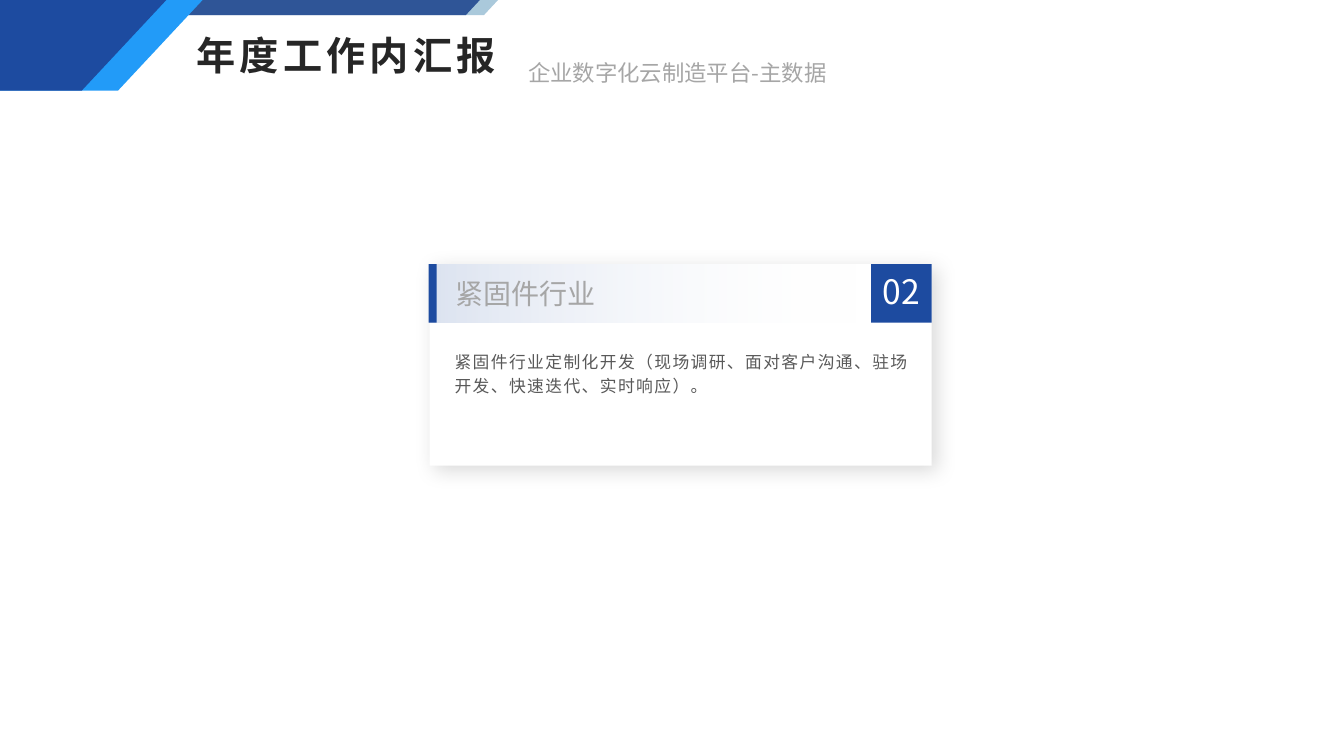
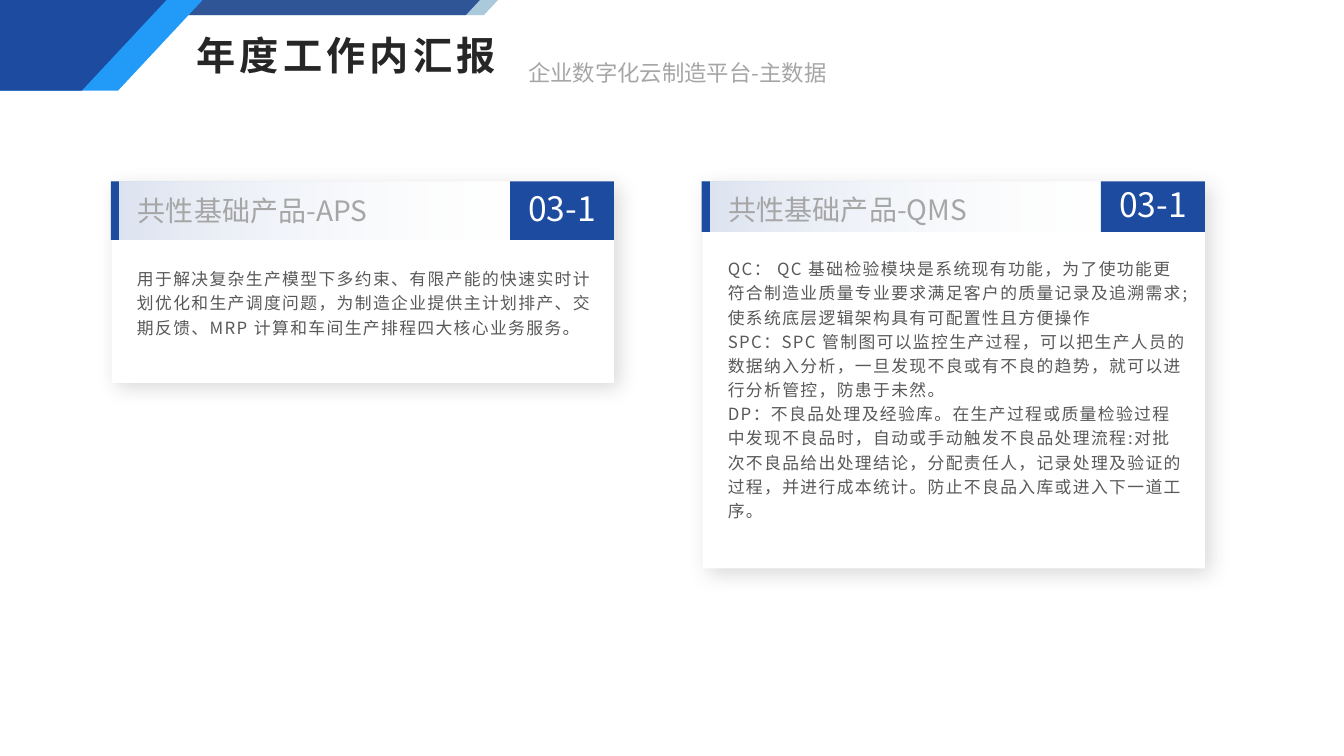
"""Build two annual report slides with titled product cards."""
from dataclasses import dataclass
from typing import Optional

from lxml.etree import SubElement
from pptx import Presentation
from pptx.dml.color import RGBColor
from pptx.enum.shapes import MSO_SHAPE as Preset
from pptx.enum.text import MSO_ANCHOR as Anchor, MSO_AUTO_SIZE as AutoSize, PP_ALIGN as Align
from pptx.oxml.ns import qn
from pptx.shapes.autoshape import Shape
from pptx.slide import Slide, SlideLayout
from pptx.util import Pt

PX = 9144


@dataclass(frozen=True)
class Theme:
    """Colours, font and type sizes of the presentation."""

    font: str = "Noto Sans CJK SC"
    navy: str = "1D4BA0"
    sky: str = "229BF8"
    steel: str = "2F5597"
    teal: str = "1A6D9F"
    white: str = "FFFFFF"
    black: str = "000000"
    ink: str = "262626"
    body_grey: str = "595959"
    soft_grey: str = "A6A6A6"
    title_size: int = 28
    badge_size: int = 24
    heading_size: int = 20
    subtitle_size: int = 16
    body_size: int = 12


THEME = Theme()


@dataclass(frozen=True)
class Box:
    """Position and size in px."""

    left: int
    top: int
    width: int
    height: int

    def emu(self) -> tuple[int, int, int, int]:
        """Return the box in EMU."""
        return self.left * PX, self.top * PX, self.width * PX, self.height * PX


@dataclass(frozen=True)
class TextStyle:
    """Type settings of a text."""

    size: int
    color: str
    bold: bool = False
    tracking: int = 0
    line_spacing: Optional[float] = None
    align: Optional[Align] = None


TITLE = TextStyle(THEME.title_size, THEME.ink, bold=True, tracking=3)
SUBTITLE = TextStyle(THEME.subtitle_size, THEME.soft_grey)
HEADING = TextStyle(THEME.heading_size, THEME.soft_grey)
BODY = TextStyle(THEME.body_size, THEME.body_grey, tracking=1, line_spacing=1.2)
BADGE = TextStyle(THEME.badge_size, THEME.white, align=Align.CENTER)


@dataclass(frozen=True)
class Card:
    """A product card with a header band and a numbered badge."""

    left: int
    top: int
    height: int
    header: int
    badge_width: int
    body_height: int
    badge: str
    heading: str
    body: str


CARD_WIDTH = 498
BAND_WIDTH = 438

SLIDE_CARDS = (
    (
        Card(426, 262, 200, 58, 60, 57, "02", "紧固件行业",
             "紧固件行业定制化开发（现场调研、面对客户沟通、驻场开发、快速迭代、实时响应）。"),
    ),
    (
        Card(111, 180, 200, 58, 103, 105, "03-1", "共性基础产品-APS",
             "用于解决复杂生产模型下多约束、有限产能的快速实时计划优化和生产调度问题，"
             "为制造企业提供主计划排产、交期反馈、MRP 计算和车间生产排程四大核心业务服务。"),
        Card(697, 180, 384, 50, 103, 281, "03-1", "共性基础产品-QMS",
             "QC： QC 基础检验模块是系统现有功能，为了使功能更符合制造业质量专业要求"
             "满足客户的质量记录及追溯需求;使系统底层逻辑架构具有可配置性且方便操作\n"
             "SPC：SPC 管制图可以监控生产过程，可以把生产人员的数据纳入分析，"
             "一旦发现不良或有不良的趋势，就可以进行分析管控，防患于未然。\n"
             "DP：不良品处理及经验库。在生产过程或质量检验过程中发现不良品时，"
             "自动或手动触发不良品处理流程:对批次不良品给出处理结论，分配责任人，"
             "记录处理及验证的过程，并进行成本统计。防止不良品入库或进入下一道工序。"),
    ),
)


def set_alphas(shape: Shape, *percents: int) -> None:
    """Set the opacity of each fill colour in turn."""
    for color, percent in zip(shape.element.spPr.iter(qn("a:srgbClr")), percents):
        SubElement(color, qn("a:alpha"), val=str(percent * 1000))


def paint(shape: Shape, color: str) -> Shape:
    """Give a shape a plain fill without line or shadow."""
    shape.shadow.inherit = False
    shape.line.fill.background()
    shape.fill.solid()
    shape.fill.fore_color.rgb = RGBColor.from_string(color)
    return shape


def add_block(slide: Slide, box: Box, color: str, preset: Preset = Preset.RECTANGLE) -> Shape:
    """Add a plain preset shape."""
    return paint(slide.shapes.add_shape(preset, *box.emu()), color)


def add_outline(slide: Slide, points: tuple[tuple[int, int], ...], color: str) -> Shape:
    """Add a closed polygon."""
    builder = slide.shapes.build_freeform(*points[0], scale=PX)
    builder.add_line_segments(points[1:])
    return paint(builder.convert_to_shape(), color)


def write(shape: Shape, text: str, style: TextStyle) -> None:
    """Fill a shape with styled text."""
    shape.text_frame.text = text
    for paragraph in shape.text_frame.paragraphs:
        paragraph.alignment = style.align
        paragraph.line_spacing = style.line_spacing
        for run in paragraph.runs:
            run.font.name = THEME.font
            run.font.size = Pt(style.size)
            run.font.bold = style.bold
            run.font.color.rgb = RGBColor.from_string(style.color)
            properties = run.font._element
            properties.set("spc", str(style.tracking * 100))
            SubElement(properties, qn("a:ea"), typeface=THEME.font)


def add_text(slide: Slide, box: Box, text: str, style: TextStyle, wrap: bool = True) -> None:
    """Add a text box that grows with its text."""
    label = slide.shapes.add_textbox(*box.emu())
    label.text_frame.word_wrap = wrap
    label.text_frame.auto_size = AutoSize.SHAPE_TO_FIT_TEXT
    write(label, text, style)


def decorate_layout(layout: SlideLayout, slide: Slide) -> None:
    """Draw the corner bands and move them to the shared layout."""
    back_strip = add_block(slide, Box(118, 0, 376, 15), THEME.teal, Preset.PARALLELOGRAM)
    set_alphas(back_strip, 37)
    front_strip = add_block(slide, Box(100, 0, 376, 15), THEME.steel, Preset.PARALLELOGRAM)
    for strip in (back_strip, front_strip):
        strip.adjustments[0] = 0.93
    sky_corner = add_outline(slide, ((0, 0), (201, 0), (117, 90), (0, 90)), THEME.sky)
    navy_corner = add_outline(slide, ((0, 0), (165, 0), (81, 90), (0, 90)), THEME.navy)
    for band in (back_strip, front_strip, sky_corner, navy_corner):
        layout.element.cSld.spTree.append(band.element)


def add_titles(slide: Slide) -> None:
    """Add the report title and its subtitle."""
    add_text(slide, Box(185, 26, 321, 57), "年度工作内汇报", TITLE, wrap=False)
    add_text(slide, Box(514, 54, 322, 37), "企业数字化云制造平台-主数据", SUBTITLE)


def add_panel(slide: Slide, box: Box) -> None:
    """Add the white card ground with its soft shadow."""
    panel = add_block(slide, box, THEME.white)
    effects = panel.element.spPr.find(qn("a:effectLst"))
    shadow = SubElement(effects, qn("a:outerShdw"), blurRad=str(Pt(15)), dist=str(Pt(5)),
                        dir=str(45 * 60000), algn="tl", rotWithShape="0")
    color = SubElement(shadow, qn("a:srgbClr"), val=THEME.black)
    SubElement(color, qn("a:alpha"), val="15000")


def add_band(slide: Slide, box: Box) -> None:
    """Add the header band that fades out to the right."""
    band = add_block(slide, box, THEME.white)
    band.fill.gradient()
    band.fill.gradient_angle = 180
    for stop, color in zip(band.fill.gradient_stops, (THEME.white, THEME.navy)):
        stop.color.rgb = RGBColor.from_string(color)
    set_alphas(band, 0, 16)


def add_badge(slide: Slide, box: Box, number: str) -> None:
    """Add the numbered badge."""
    badge = add_block(slide, box, THEME.navy)
    frame = badge.text_frame
    frame.vertical_anchor = Anchor.MIDDLE
    frame.margin_top, frame.margin_bottom = 0, 5 * PX
    write(badge, number, BADGE)


def add_card(slide: Slide, card: Card) -> None:
    """Draw one card from its ground to its badge."""
    left, top, header = card.left, card.top, card.header
    inset = round(header * 0.12)
    body_top = top + header + round(header * 0.35)
    badge_left = left + CARD_WIDTH - card.badge_width
    add_panel(slide, Box(left, top, CARD_WIDTH, card.height))
    add_band(slide, Box(left, top, BAND_WIDTH, header))
    add_block(slide, Box(left - 1, top, 8, header), THEME.navy)
    add_text(slide, Box(left + 16, top + inset, 430, header - 2 * inset), card.heading, HEADING)
    add_text(slide, Box(left + 15, body_top, 475, card.body_height), card.body, BODY)
    add_badge(slide, Box(badge_left, top, card.badge_width, header), card.badge)


def main() -> None:
    """Build and save the presentation."""
    deck = Presentation()
    deck.slide_width, deck.slide_height = 1333 * PX, 750 * PX
    blank = deck.slide_layouts[6]
    slides = [deck.slides.add_slide(blank) for _ in SLIDE_CARDS]
    decorate_layout(blank, slides[0])
    for slide, cards in zip(slides, SLIDE_CARDS):
        add_titles(slide)
        for card in cards:
            add_card(slide, card)
    deck.save("out.pptx")


if __name__ == "__main__":
    main()
